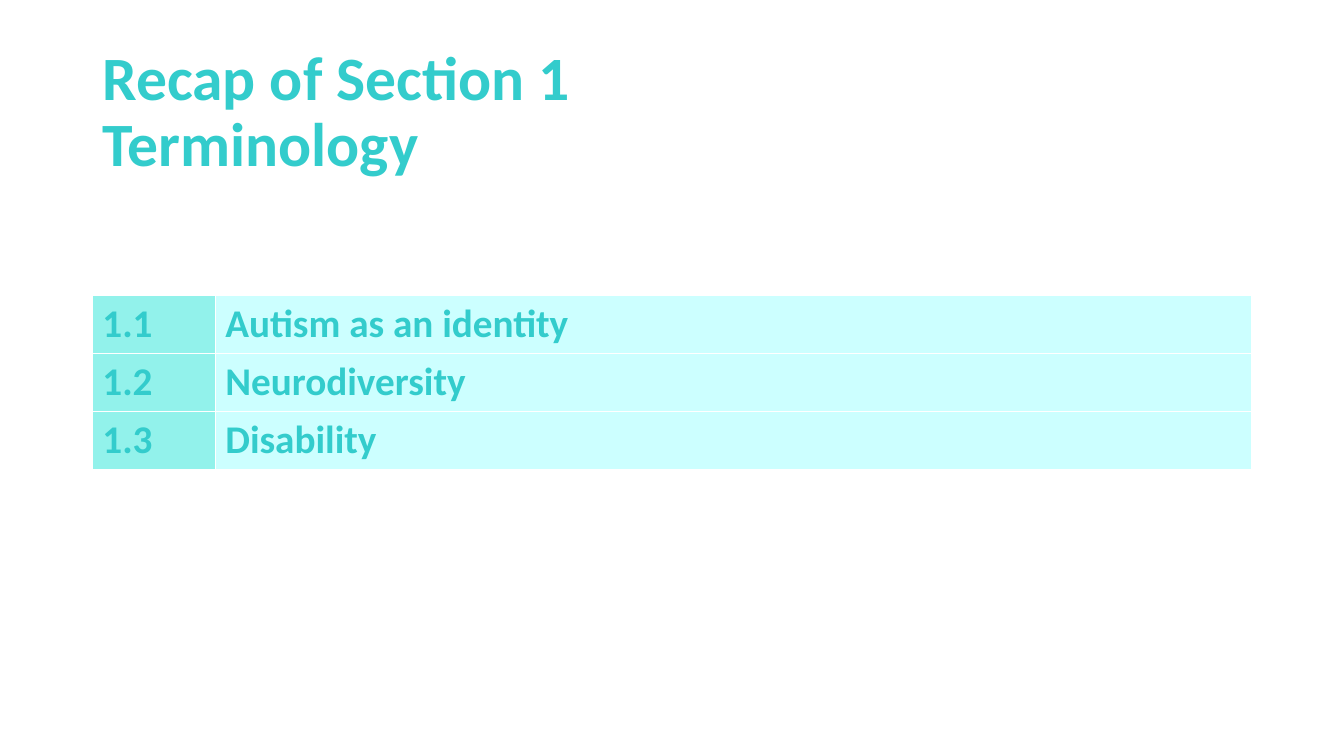
import pptx
import pptx.dml.color
import pptx.enum.text
import pptx.util

Pt = pptx.util.Pt


def colour(value):
    return pptx.dml.color.RGBColor.from_string(value)


class Page:
    font_name = "Calibri"
    text_colour = "33CCCC"
    number_fill = "92F2EB"
    topic_fill = "CCFFFF"

    def __init__(self, deck):
        self.slide = deck.slides.add_slide(deck.slide_layouts[5])

    def format_text(self, frame, size):
        for para in frame.paragraphs:
            for span in para.runs:
                span.font.name = self.font_name
                span.font.size = Pt(size)
                span.font.bold = True
                span.font.color.rgb = colour(self.text_colour)

    def add_title(self, text, left, top, width, height):
        box = self.slide.shapes.title
        box.left, box.top = Pt(left), Pt(top)
        box.width, box.height = Pt(width), Pt(height)
        frame = box.text_frame
        frame.text = text
        frame.word_wrap = True
        frame.auto_size = pptx.enum.text.MSO_AUTO_SIZE.NONE
        frame.vertical_anchor = pptx.enum.text.MSO_ANCHOR.MIDDLE
        for para in frame.paragraphs:
            para.alignment = pptx.enum.text.PP_ALIGN.LEFT
            para.line_spacing = 0.9
        self.format_text(frame, 44)

    def add_topics(self, topics, left, top, widths, row_height):
        table = self.slide.shapes.add_table(
            len(topics), len(widths), Pt(left), Pt(top),
            Pt(sum(widths)), Pt(row_height * len(topics))).table
        table.horz_banding = False
        for column, width in zip(table.columns, widths):
            column.width = Pt(width)
        for number, (row, topic) in enumerate(zip(table.rows, topics), 1):
            texts = (f"1.{number}", topic)
            fills = (self.number_fill, self.topic_fill)
            for cell, text, fill in zip(row.cells, texts, fills):
                cell.text_frame.text = text
                cell.fill.solid()
                cell.fill.fore_color.rgb = colour(fill)
                self.format_text(cell.text_frame, 28)


def main():
    deck = pptx.Presentation()
    deck.slide_width, deck.slide_height = Pt(960), Pt(540)
    page = Page(deck)
    page.add_title("Recap of Section 1 \vTerminology", 66, 28.75, 828, 104.4)
    page.add_topics(("Autism as an identity", "Neurodiversity", "Disability"),
                    66, 211, (87.8, 740.2), 41.4)
    deck.save("out.pptx")


if __name__ == "__main__":
    main()
